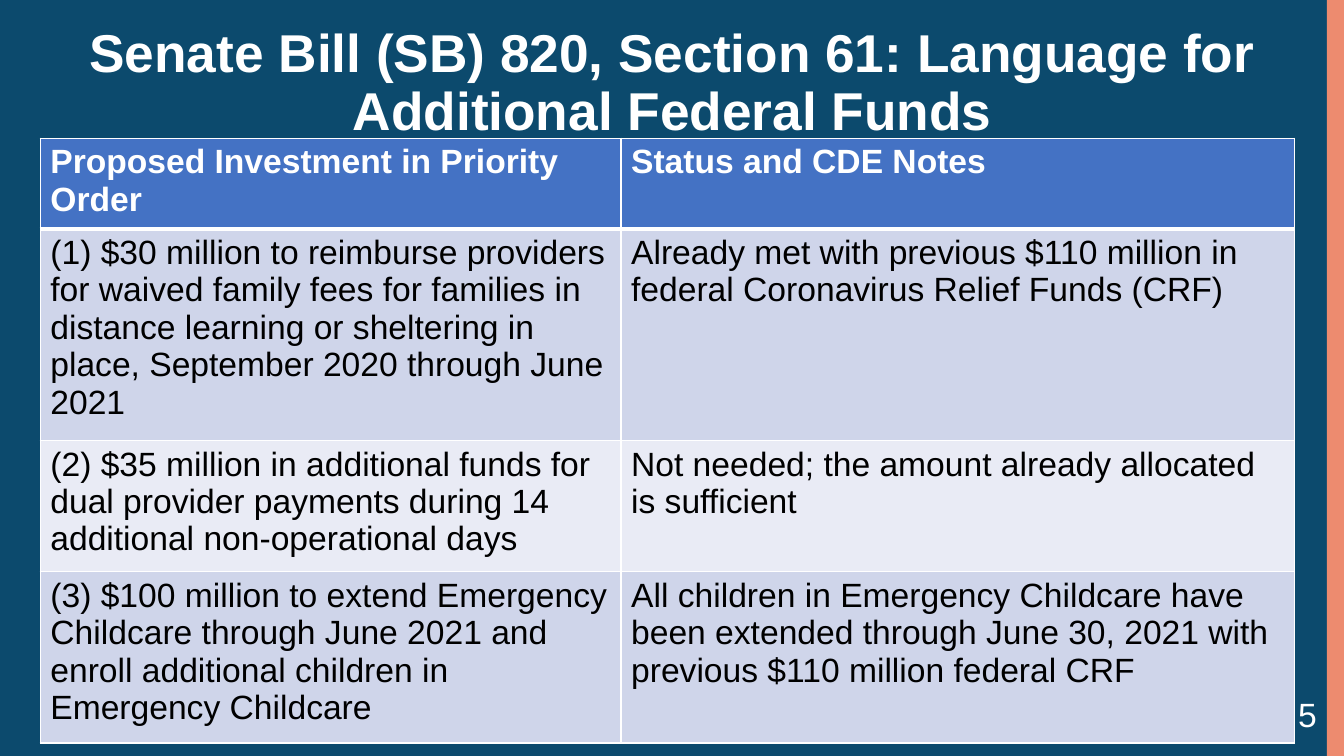
from lxml import etree
from pptx import Presentation
from pptx.dml.color import RGBColor
from pptx.enum.shapes import MSO_SHAPE
from pptx.enum.text import MSO_ANCHOR, PP_ALIGN
from pptx.oxml.ns import qn
from pptx.util import Inches, Pt

RECT = MSO_SHAPE.RECTANGLE
MIDDLE = MSO_ANCHOR.MIDDLE
CENTER, RIGHT = PP_ALIGN.CENTER, PP_ALIGN.RIGHT

NAVY = RGBColor(0x0C, 0x4A, 0x6D)
CORAL = RGBColor(0xED, 0x8B, 0x6F)
BLUE = RGBColor(0x44, 0x72, 0xC4)
BANDS = [RGBColor(0xE9, 0xEB, 0xF5), RGBColor(0xCF, 0xD5, 0xEA)]
WHITE = RGBColor(0xFF, 0xFF, 0xFF)
BLACK = RGBColor(0x00, 0x00, 0x00)

# Content
TITLE = "Senate Bill (SB) 820, Section 61: Language for Additional Federal Funds"
NUMBER = "5"
ROWS = [
    ("Proposed Investment in Priority Order", "Status and CDE Notes"),
    ("(1) $30 million to reimburse providers for waived family fees for families "
     "in distance learning or sheltering in place, September 2020 through June 2021",
     "Already met with previous $110 million in federal Coronavirus Relief Funds (CRF)"),
    ("(2) $35 million in additional funds for dual provider payments during 14 "
     "additional non-operational days",
     "Not needed; the amount already allocated is sufficient"),
    ("(3) $100 million to extend Emergency Childcare through June 2021 and enroll "
     "additional children in Emergency Childcare",
     "All children in Emergency Childcare have been extended through June 30, 2021 "
     "with previous $110 million federal CRF"),
]

# Layout in inches
WIDE, HIGH = 13.33, 7.5
BAR = 0.17
LEFT, TOP = 0.4, 1.37
COLS = [5.76, 6.68]
TALL = [0.9, 2.1, 1.3, 1.7]

# Text formats
HEAD = {"name": "Arial", "size": Pt(24), "bold": True}
BODY = {**HEAD, "bold": False}
LARGE = {**HEAD, "size": Pt(38)}


def style(frame, text, font, color, **para):
    """Write one paragraph with its font and paragraph format."""
    line = frame.paragraphs[0]
    run = line.add_run()
    run.text = text
    for key, value in font.items():
        setattr(run.font, key, value)
    run.font.color.rgb = color
    for key, value in para.items():
        setattr(line, key, value)


def label(box, text, font, **para):
    """Add a white text box, centred in height."""
    frame = slide.shapes.add_textbox(*map(Inches, box)).text_frame
    frame.word_wrap = True
    frame.vertical_anchor = MIDDLE
    style(frame, text, font, WHITE, **para)


def border(cell, sides):
    """Draw white cell borders, given side and width in points."""
    props = cell._tc.get_or_add_tcPr()
    for side, width in sides.items():
        edge = etree.SubElement(props, qn("a:ln" + side), w=str(Pt(width)))
        fill = etree.SubElement(edge, qn("a:solidFill"))
        etree.SubElement(fill, qn("a:srgbClr"), val=str(WHITE))


deck = Presentation()
deck.slide_width, deck.slide_height = Inches(WIDE), Inches(HIGH)
slide = deck.slides.add_slide(deck.slide_layouts[6])
slide.background.fill.solid()
slide.background.fill.fore_color.rgb = NAVY

# Side bar
bar = slide.shapes.add_shape(RECT, *map(Inches, (WIDE - BAR, 0, BAR, HIGH)))
bar.shadow.inherit = False
bar.fill.solid()
bar.fill.fore_color.rgb = CORAL
bar.line.fill.background()

# Title
label((BAR, 0.11, 13, 1.45), TITLE, LARGE, alignment=CENTER, line_spacing=0.9)

# Table of investments
area = map(Inches, (LEFT, TOP, sum(COLS), sum(TALL)))
table = slide.shapes.add_table(len(ROWS), len(COLS), *area).table
for col, width in zip(table.columns, COLS):
    col.width = Inches(width)
for i, (row, height) in enumerate(zip(ROWS, TALL)):
    table.rows[i].height = Inches(height)
    for j, text in enumerate(row):
        cell = table.cell(i, j)
        top, low = (3 if i == 1 else 1), (3 if i == 0 else 1)
        border(cell, {"L": 1, "R": 1, "T": top, "B": low})
        cell.fill.solid()
        cell.fill.fore_color.rgb = BANDS[i % 2] if i else BLUE
        style(cell.text_frame, text, BODY if i else HEAD, BLACK if i else WHITE)

# Slide number
label((WIDE - BAR - 3, 6.88, 3, 0.4), NUMBER, BODY, alignment=RIGHT)

deck.save("out.pptx")
